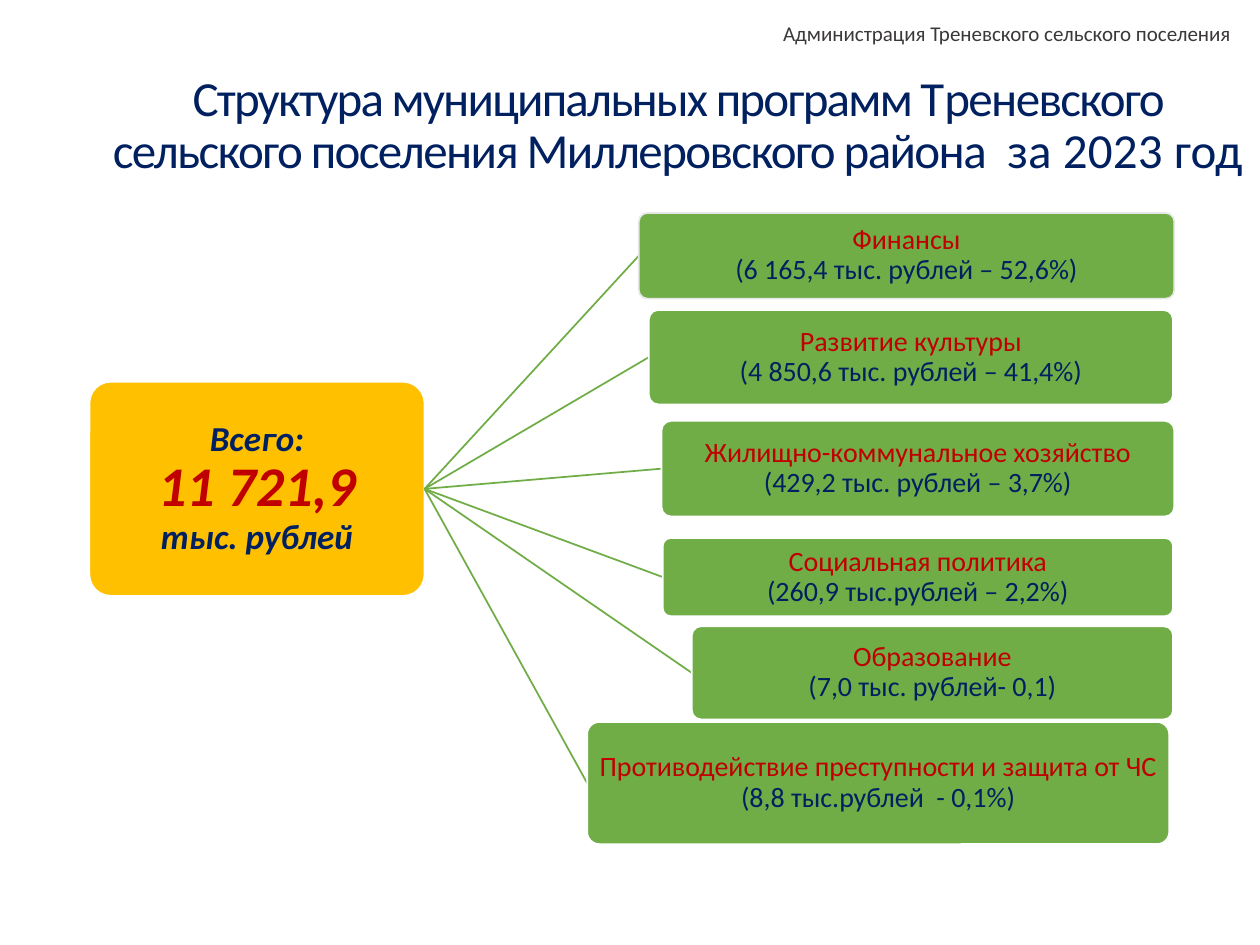
from lxml.etree import SubElement
from pptx import Presentation
from pptx.dml.color import RGBColor
from pptx.enum.shapes import MSO_CONNECTOR, MSO_SHAPE
from pptx.enum.text import MSO_ANCHOR, PP_ALIGN
from pptx.oxml.ns import qn
from pptx.util import Inches, Pt

COLORS = {
    "navy": "002060",
    "red": "C00000",
    "gray": "3B3838",
    "gold": "FFC000",
    "green": "70AD47",
    "white": "FFFFFF",
    "light": "E7E7E7",
}
FONT = "Calibri"
HUB = (0.71, 3.03, 2.66, 1.7)
PROGRAMS = [
    ("Финансы", "(6 165,4 тыс. рублей – 52,6%)", (5.07, 1.69, 4.25, 0.68), "light"),
    ("Развитие культуры", "(4 850,6 тыс. рублей – 41,4%)", (5.15, 2.46, 4.16, 0.75), "white"),
    ("Жилищно-коммунальное хозяйство", "(429,2 тыс. рублей – 3,7%)", (5.25, 3.34, 4.07, 0.76), "white"),
    ("Социальная политика", "(260,9 тыс.рублей – 2,2%)", (5.26, 4.27, 4.05, 0.62), "white"),
    ("Образование", "(7,0 тыс. рублей- 0,1)", (5.49, 4.97, 3.82, 0.74), "white"),
    ("Противодействие преступности и защита от ЧС", "(8,8 тыс.рублей  - 0,1%)", (4.66, 5.73, 4.62, 0.97), "white"),
]


def color(name):
    return RGBColor.from_string(COLORS[name])


def style_font(font, size, name):
    font.name = FONT
    font.size = Pt(size)
    font.color.rgb = color(name)


def add_text_box(page, place):
    box = page.shapes.add_textbox(*map(Inches, place))
    frame = box.text_frame
    frame.word_wrap = True
    frame.vertical_anchor = MSO_ANCHOR.MIDDLE
    return frame


def add_title(page):
    para = add_text_box(page, (0.76, 0.47, 9.24, 1.07)).paragraphs[0]
    para.alignment = PP_ALIGN.CENTER
    para.line_spacing = 0.9
    for text, spacing in [
        ("Структура муниципальных программ Т", -100),
        ("реневского сельского поселения Миллеровского района ", -90),
        (" за 2023 год", 10),
    ]:
        span = para.add_run()
        span.text = text
        style_font(span.font, 28, "navy")
        span._r.get_or_add_rPr().set("spc", str(spacing))


def add_header(page):
    frame = add_text_box(page, (3.54, 0.14, 6.33, 0.24))
    frame.text = "Администрация Треневского сельского поселения"
    para = frame.paragraphs[0]
    para.alignment = PP_ALIGN.RIGHT
    style_font(para.runs[0].font, 12, "gray")


def add_card(page, place, fill, outline, lines, emphasis=False):
    card = page.shapes.add_shape(MSO_SHAPE.ROUNDED_RECTANGLE, *map(Inches, place))
    card.adjustments[0] = 0.1
    card.shadow.inherit = False
    card.fill.solid()
    card.fill.fore_color.rgb = color(fill)
    card.line.color.rgb = color(outline)
    card.line.width = Pt(1)
    frame = card.text_frame
    frame.word_wrap = True
    frame.vertical_anchor = MSO_ANCHOR.MIDDLE
    frame.margin_left = frame.margin_right = Inches(0.01)
    frame.margin_top = frame.margin_bottom = Inches(0.01)
    frame.text = "\n".join(text for text, size, name in lines)
    for para, (text, size, name) in zip(frame.paragraphs, lines):
        para.alignment = PP_ALIGN.CENTER
        para.line_spacing = 0.9
        font = para.runs[0].font
        style_font(font, size, name)
        font.bold = font.italic = emphasis


def add_branch(page, place):
    hub_left, hub_top, hub_width, hub_height = HUB
    left, top, width, height = place
    ends = (hub_left + hub_width, hub_top + hub_height / 2, left, top + height / 2)
    branch = page.shapes.add_connector(MSO_CONNECTOR.STRAIGHT, *map(Inches, ends))
    branch.line.color.rgb = color("green")
    branch.line.width = Pt(1)
    SubElement(branch._element.spPr, qn("a:effectLst"))


def main():
    deck = Presentation()
    deck.slide_width = Inches(10)
    deck.slide_height = Inches(7.5)
    page = deck.slides.add_slide(deck.slide_layouts[6])
    add_title(page)
    add_header(page)
    total = [("Всего:", 20, "navy"), ("11 721,9", 32, "red"), ("тыс. рублей", 20, "navy")]
    add_card(page, HUB, "gold", "white", total, emphasis=True)
    for name, amount, place, outline in PROGRAMS:
        add_branch(page, place)
        add_card(page, place, "green", outline, [(name, 16, "red"), (amount, 16, "navy")])
    deck.save("out.pptx")


if __name__ == "__main__":
    main()
